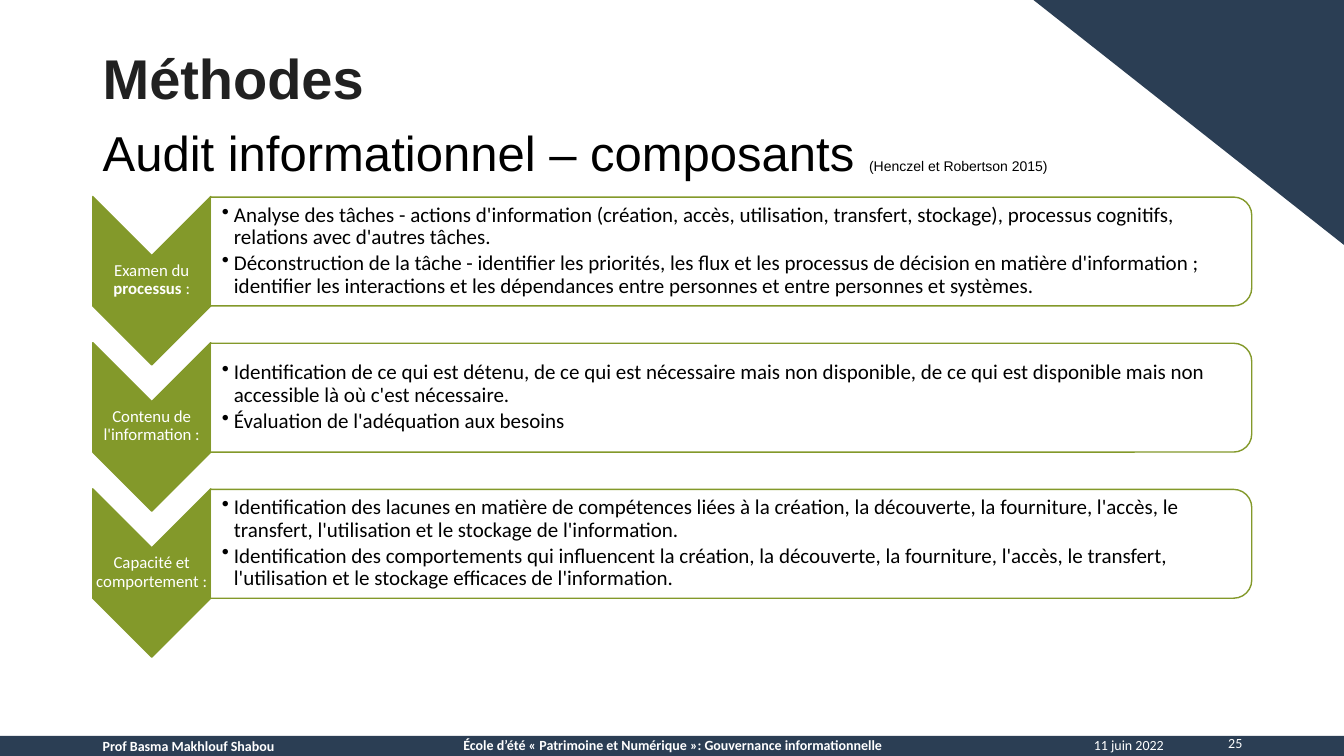
import pptx
import pptx.dml.color
import pptx.enum.shapes
import pptx.enum.text
import pptx.oxml.ns
import pptx.util
from lxml import etree

Inches = pptx.util.Inches
Pt = pptx.util.Pt
RGBColor = pptx.dml.color.RGBColor
MSO_SHAPE = pptx.enum.shapes.MSO_SHAPE
MSO_ANCHOR = pptx.enum.text.MSO_ANCHOR
PP_ALIGN = pptx.enum.text.PP_ALIGN
qn = pptx.oxml.ns.qn

NAVY = RGBColor(0x2B, 0x3E, 0x54)
GREEN = RGBColor(0x83, 0x99, 0x2A)
WHITE = RGBColor(0xFF, 0xFF, 0xFF)
BLACK = RGBColor(0x00, 0x00, 0x00)
CHARCOAL = RGBColor(0x21, 0x21, 0x21)

STEP_GAP = 1.45
STEPS = [
    ([("Examen du ", False), ("processus", True), (" :", False)], [
        "Analyse des tâches - actions d'information (création, accès, utilisation, transfert, stockage), "
        "processus cognitifs, relations avec d'autres tâches.",
        "Déconstruction de la tâche - identifier les priorités, les flux et les processus de décision en "
        "matière d'information ; identifier les interactions et les dépendances entre personnes et entre "
        "personnes et systèmes."]),
    ([("Contenu de l'information :", False)], [
        "Identification de ce qui est détenu, de ce qui est nécessaire mais non disponible, de ce qui est "
        "disponible mais non accessible là où c'est nécessaire.",
        "Évaluation de l'adéquation aux besoins"]),
    ([("Capacité et comportement :", False)], [
        "Identification des lacunes en matière de compétences liées à la création, la découverte, la "
        "fourniture, l'accès, le transfert, l'utilisation et le stockage de l'information.",
        "Identification des comportements qui influencent la création, la découverte, la fourniture, "
        "l'accès, le transfert, l'utilisation et le stockage efficaces de l'information."]),
]

presentation = pptx.Presentation()
presentation.slide_width = Inches(13.33)
presentation.slide_height = Inches(7.5)
slide = presentation.slides.add_slide(presentation.slide_layouts[6])


def add_shape(kind, box, fill, line=None, rotation=0):
    shape = slide.shapes.add_shape(kind, *map(Inches, box))
    shape.shadow.inherit = False
    shape.rotation = rotation
    shape.fill.solid()
    shape.fill.fore_color.rgb = fill
    if line is None:
        shape.line.fill.background()
    else:
        shape.line.color.rgb = line
        shape.line.width = Pt(1)
    return shape


def add_text(box, paragraphs, size, color, font="Calibri", align=PP_ALIGN.LEFT,
             left_inset=None, space_after=0, bulleted=False):
    """Add a text box from lists of (text, bold) runs; a left inset also centres it vertically."""
    text_frame = slide.shapes.add_textbox(*map(Inches, box)).text_frame
    text_frame.word_wrap = True
    if left_inset is not None:
        text_frame.vertical_anchor = MSO_ANCHOR.MIDDLE
        text_frame.margin_left = Inches(left_inset)
        text_frame.margin_top = text_frame.margin_right = text_frame.margin_bottom = Inches(0.01)
    for index, runs in enumerate(paragraphs):
        paragraph = text_frame.add_paragraph() if index else text_frame.paragraphs[0]
        paragraph.alignment = align
        paragraph.line_spacing = 0.9
        paragraph.space_after = Pt(space_after)
        if bulleted:
            properties = paragraph._p.get_or_add_pPr()
            properties.set("marL", str(Inches(0.12)))
            properties.set("indent", str(Inches(-0.12)))
            etree.SubElement(properties, qn("a:buChar")).set("char", "•")
        for text, bold in runs:
            run = paragraph.add_run()
            run.text = text
            run.font.name = font
            run.font.size = Pt(size)
            run.font.bold = bold
            run.font.color.rgb = color
    return text_frame


# Corner and footer
add_shape(MSO_SHAPE.RIGHT_TRIANGLE, (10.25, 0, 3.08, 2.43), NAVY, rotation=180)
add_shape(MSO_SHAPE.RECTANGLE, (0, 7.3, 13.33, 0.2), NAVY)
for box, text, bold, align in [
    ((10.65, 7.28, 0.99, 0.22), "11 juin 2022", False, PP_ALIGN.RIGHT),
    ((0.92, 7.29, 3.05, 0.22), "Prof Basma Makhlouf Shabou", True, PP_ALIGN.JUSTIFY),
    ((11.88, 7.26, 0.54, 0.27), "25", False, PP_ALIGN.RIGHT),
    ((4.47, 7.28, 4.4, 0.29),
     "École d’été « Patrimoine et Numérique »: Gouvernance informationnelle", True, PP_ALIGN.CENTER),
]:
    add_text(box, [[(text, bold)]], 10, WHITE, align=align)

# Audit components
for index, (label, points) in enumerate(STEPS):
    offset = index * STEP_GAP
    add_shape(MSO_SHAPE.CHEVRON, (0.67, 2.2 + offset, 1.67, 1.17), GREEN, GREEN, 90)
    add_text((0.92, 2.53 + offset, 1.17, 0.5), [label], 12, WHITE,
             align=PP_ALIGN.CENTER, left_inset=0.01, space_after=4.2)
    panel = add_shape(MSO_SHAPE.ROUND_2_SAME_RECTANGLE, (6.71, -2.67 + offset, 1.08, 10.33),
                      WHITE, GREEN, 90)
    panel_color = panel._element.spPr.find(qn("a:solidFill")).find(qn("a:srgbClr"))
    etree.SubElement(panel_color, qn("a:alpha")).set("val", "90000")
    add_text((2.08, 2 + offset, 10.28, 0.98), [[(point, False)] for point in points], 15, BLACK,
             left_inset=0.12, space_after=2.25, bulleted=True)

# Headings
add_text((0.92, 0.46, 11.5, 0.71), [[("Méthodes", True)]], 40, CHARCOAL, "Arial")
subtitle = add_text(
    (0.92, 1.23, 11.5, 0.66),
    [[("Audit informationnel – composants ", False), ("(Henczel et Robertson 2015)", False)]],
    35, BLACK, "Arial")
subtitle.paragraphs[0].runs[1].font.size = Pt(10)

presentation.save("out.pptx")
